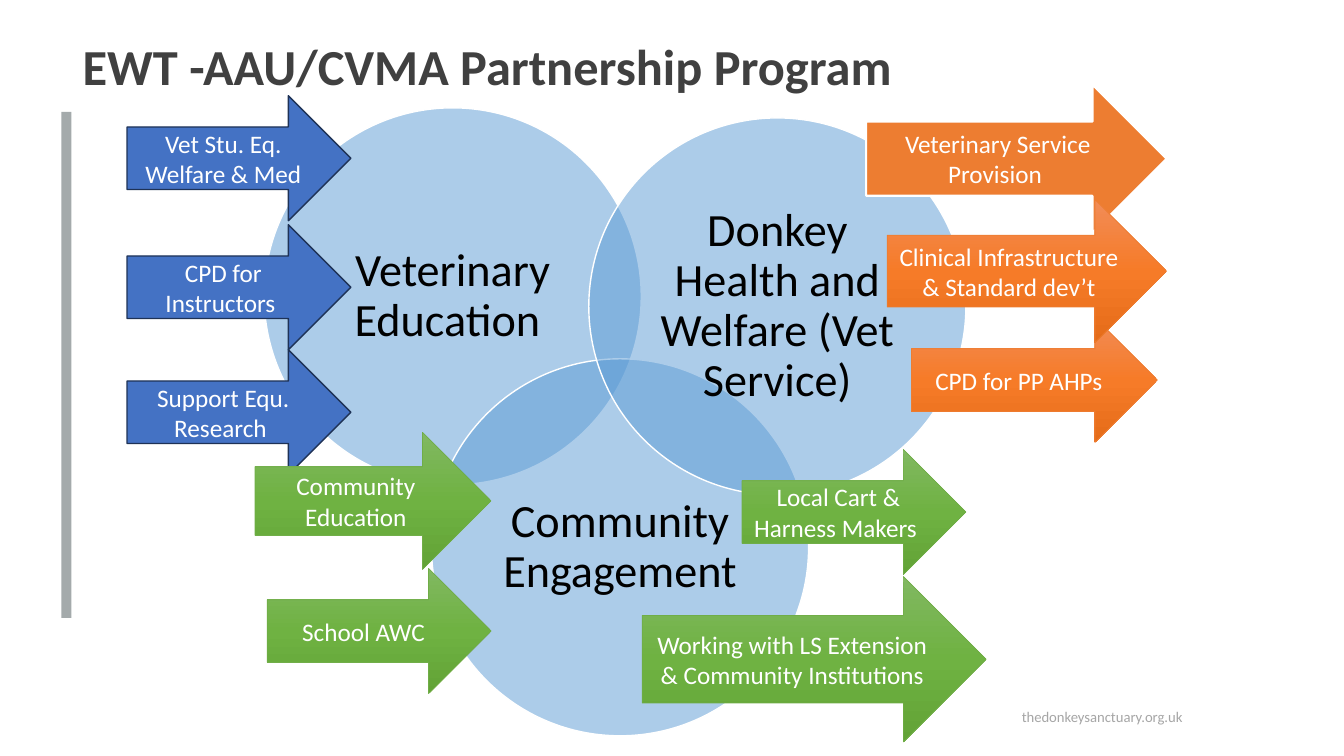
from copy import deepcopy

from lxml import etree
from pptx import Presentation
from pptx import util as u
from pptx.dml.color import RGBColor
from pptx.enum import shapes, text
from pptx.oxml import ns

PX = u.Inches(1) // 100
FONT = "Calibri"
WHITE = RGBColor(0xFF, 0xFF, 0xFF)
BLACK = RGBColor(0x00, 0x00, 0x00)
TITLE_GREY = RGBColor(0x40, 0x40, 0x40)
FOOTER_GREY = RGBColor(0xA6, 0xA6, 0xA6)
BAR_GREY = RGBColor(0xA4, 0xAA, 0xAB)
CIRCLE_BLUE = RGBColor(0x5B, 0x9B, 0xD5)
BLUE = RGBColor(0x44, 0x72, 0xC4)
NAVY = RGBColor(0x1E, 0x32, 0x56)
GREEN = RGBColor(0x70, 0xAD, 0x47)
ORANGE = RGBColor(0xED, 0x7D, 0x31)
GREEN_SHADES = [RGBColor(0x81, 0xB8, 0x61), RGBColor(0x6F, 0xB2, 0x42), RGBColor(0x62, 0xA3, 0x36)]
ORANGE_SHADES = [RGBColor(0xF1, 0x8C, 0x57), RGBColor(0xF6, 0x7B, 0x28), RGBColor(0xE5, 0x6C, 0x19)]

# Arrow styles: fill shades, line colour, line width in points
EDUCATION = ([BLUE], NAVY, 1)
COMMUNITY = (GREEN_SHADES, GREEN, 0.5)
SERVICE = (ORANGE_SHADES, ORANGE, 0.5)
SERVICE_FLAT = ([ORANGE], WHITE, 1.5)

CIRCLE_SIZE = 374
CIRCLES = [
    (262, 107, "Veterinary Education "),
    (428, 356, "Community Engagement "),
    (584, 117, "Donkey Health and Welfare (Vet Service)"),
]
ARROWS = [
    ((126, 95, 222, 124), EDUCATION, "Vet Stu. Eq. Welfare & Med"),
    ((126, 223, 222, 124), EDUCATION, "CPD for Instructors "),
    ((126, 347, 222, 124), EDUCATION, "Support Equ. Research "),
    ((253, 429, 234, 136), COMMUNITY, "Community Education"),
    ((265, 564, 222, 124), COMMUNITY, "School AWC"),
    ((859, 84, 298, 147), SERVICE_FLAT, "Veterinary Service Provision "),
    ((904, 315, 244, 124), SERVICE, "CPD for PP AHPs"),
    ((736, 446, 222, 124), COMMUNITY, "Local Cart & Harness Makers "),
    ((637, 572, 341, 164), COMMUNITY, "Working with LS Extension & Community Institutions"),
    ((880, 198, 277, 142), SERVICE, "Clinical Infrastructure & Standard dev’t"),
]


def scaled(box):
    return [length * PX for length in box]


def write(shape, words, size, colour, align, anchor, margins=(10, 5), spacing=1.0, bold=False):
    """Fill a shape with one paragraph; margins are (sides, top and bottom) in px."""
    frame = shape.text_frame
    frame.word_wrap = True
    frame.vertical_anchor = anchor
    frame.margin_left = frame.margin_right = margins[0] * PX
    frame.margin_top = frame.margin_bottom = margins[1] * PX
    paragraph = frame.paragraphs[0]
    paragraph.alignment = align
    paragraph.line_spacing = spacing
    paragraph.space_before = u.Pt(0)
    run = paragraph.add_run()
    run.text = words
    run.font.name = FONT
    run.font.size = u.Pt(size)
    run.font.bold = bold
    run.font.color.rgb = colour


def fill_shape(shape, shades):
    """Use a solid fill for one shade, else a top-to-bottom gradient of three."""
    if len(shades) == 1:
        shape.fill.solid()
        shape.fill.fore_color.rgb = shades[0]
        return
    shape.fill.gradient()
    shape.fill.gradient_angle = 270
    stop_list = shape._element.spPr.find(".//" + ns.qn("a:gsLst"))
    stop_list.insert(1, deepcopy(stop_list[0]))
    for index, (stop, shade) in enumerate(zip(shape.fill.gradient_stops, shades)):
        stop.position = index / 2
        stop.color.rgb = shade


def add_preset(slide, kind, box, shades, line_colour=None, line_width=1):
    shape = slide.shapes.add_shape(kind, *scaled(box))
    shape.shadow.inherit = False
    fill_shape(shape, shades)
    if line_colour is None:
        shape.line.fill.background()
    else:
        shape.line.color.rgb = line_colour
        shape.line.width = u.Pt(line_width)
    return shape


def add_circle(slide, left, top, words):
    box = (left, top, CIRCLE_SIZE, CIRCLE_SIZE)
    circle = add_preset(slide, shapes.MSO_SHAPE.OVAL, box, [CIRCLE_BLUE], WHITE)
    colour = circle._element.spPr.find(ns.qn("a:solidFill"))[0]
    etree.SubElement(colour, ns.qn("a:alpha")).set("val", "50000")
    write(circle, words, 33, BLACK, text.PP_ALIGN.CENTER, text.MSO_ANCHOR.MIDDLE, (14, 14), 0.9)


def add_arrow(slide, box, style, words):
    arrow = add_preset(slide, shapes.MSO_SHAPE.RIGHT_ARROW, box, *style)
    write(arrow, words, 18, WHITE, text.PP_ALIGN.CENTER, text.MSO_ANCHOR.MIDDLE)
    return arrow


def add_frame(slide):
    """Place the side bar, the web address and the title."""
    add_preset(slide, shapes.MSO_SHAPE.RECTANGLE, (61, 111, 10, 502), [BAR_GREY])
    address = slide.shapes.add_textbox(*scaled((889, 702, 284, 18)))
    write(address, "thedonkeysanctuary.org.uk", 10.5, FOOTER_GREY,
          text.PP_ALIGN.RIGHT, text.MSO_ANCHOR.TOP, (0, 0))
    title = slide.shapes.title
    title.left, title.top, title.width, title.height = scaled((82, 42, 1165, 91))
    write(title, "EWT -AAU/CVMA Partnership Program", 36, TITLE_GREY,
          text.PP_ALIGN.LEFT, text.MSO_ANCHOR.TOP, (0, 0), 0.9, True)


def main():
    presentation = Presentation()
    presentation.slide_width, presentation.slide_height = scaled((1333, 750))
    slide = presentation.slides.add_slide(presentation.slide_layouts.get_by_name("Title Only"))
    add_frame(slide)
    for circle in CIRCLES:
        add_circle(slide, *circle)
    for box, style, words in ARROWS:
        arrow = add_arrow(slide, box, style, words)
        if words.startswith("Working"):
            arrow.adjustments[0] = 0.53
    presentation.save("out.pptx")


if __name__ == "__main__":
    main()
